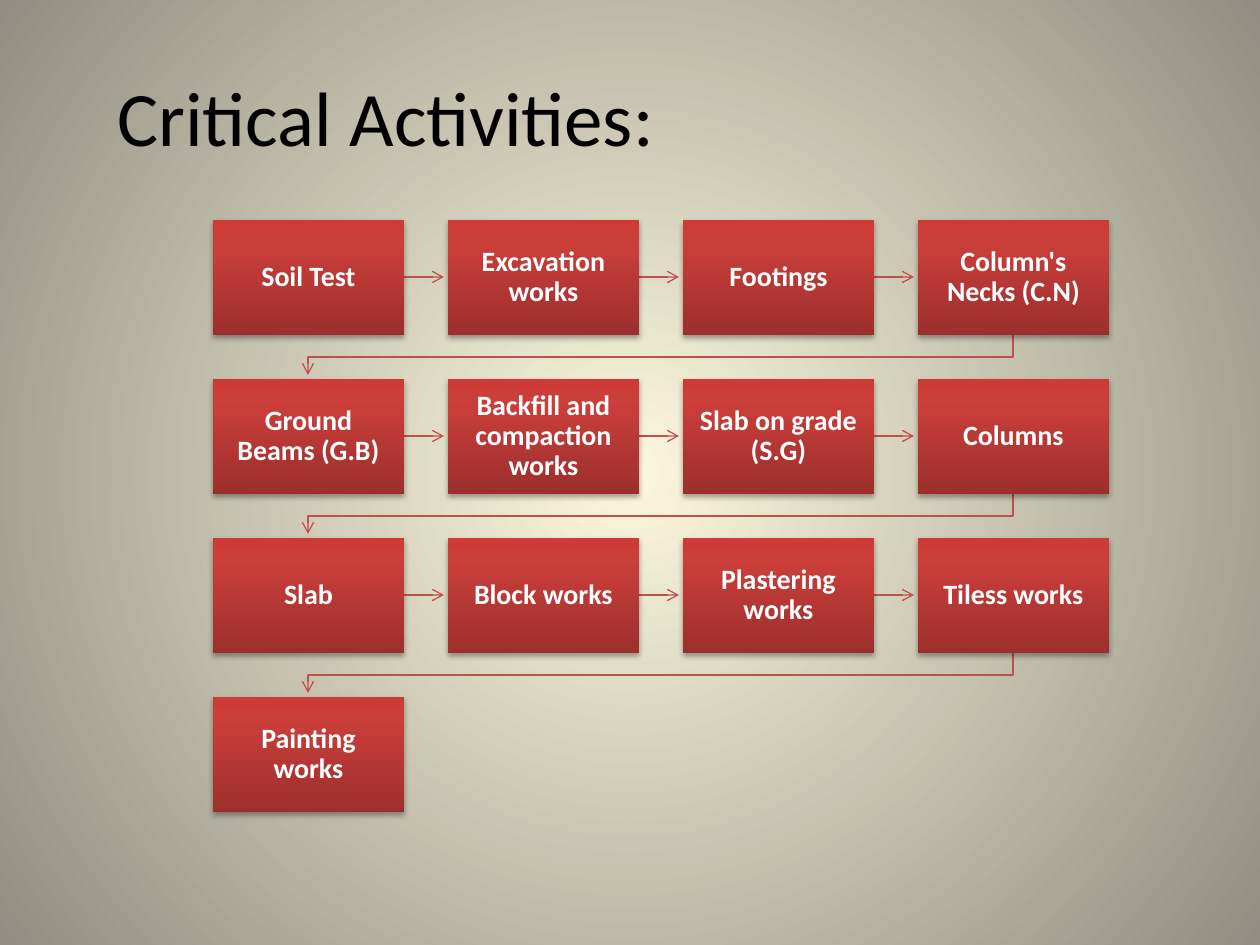
import pptx
import pptx.util
import pptx.dml.color
import pptx.enum.shapes
import pptx.enum.text
import pptx.oxml
import pptx.oxml.ns

# Content
TITLE = "Critical Activities:"
ACTIVITIES = [
    "Soil Test", "Excavation works", "Footings", "Column's Necks (C.N)",
    "Ground Beams (G.B)", "Backfill and compaction works", "Slab on grade (S.G)", "Columns",
    "Slab", "Block works", "Plastering works", "Tiless works",
    "Painting works",
]
COLORS = {"title": "000000", "label": "FFFFFF", "arrow": "C0504D", "shadow": "000000"}
BOX_STOPS = [(0, "9C2F2D"), (80, "CB3E3A"), (100, "CE3B37")]
BACKGROUND_STOPS = [(0, "FCF7DD"), (100, "918E81")]
UPWARD = '<a:lin ang="16200000" scaled="0"/>'
FROM_CENTER = ('<a:path path="circle"><a:fillToRect l="50000" t="50000" '
               'r="50000" b="50000"/></a:path>')

# Layout in px
PX = 914400 // 126
COLUMNS = 4
LEFT, TOP = 213, 220
BOX_W, BOX_H = 191, 115
PITCH_X, PITCH_Y = 235, 159
ARROW_LENGTH = 40
INSET = 15

qn = pptx.oxml.ns.qn
NS = pptx.oxml.ns.nsdecls("a")


def px(*values):
    return [pptx.util.Emu(v * PX) for v in values]


def rgb(name):
    return pptx.dml.color.RGBColor.from_string(COLORS[name])


def set_gradient(fill, parent, stops, direction):
    fill.solid()
    stop_xml = "".join(f'<a:gs pos="{pos * 1000}"><a:srgbClr val="{color}"/></a:gs>'
                       for pos, color in stops)
    gradient = pptx.oxml.parse_xml(
        f'<a:gradFill {NS} rotWithShape="1"><a:gsLst>{stop_xml}</a:gsLst>{direction}</a:gradFill>')
    parent.replace(parent.find(qn("a:solidFill")), gradient)


def set_text(sp, text, size, color, align, bold=False):
    tf = sp.text_frame
    tf.word_wrap = True
    tf.vertical_anchor = pptx.enum.text.MSO_ANCHOR.MIDDLE
    tf.text = text
    p = tf.paragraphs[0]
    p.alignment = align
    font = p.runs[0].font
    font.name, font.size, font.bold = "Calibri", pptx.util.Pt(size), bold
    font.color.rgb = rgb(color)
    return tf


def style_arrow(sp):
    sp.line.color.rgb = rgb("arrow")
    sp.line.width = pptx.util.Pt(0.75)
    spPr = sp._element.spPr
    spPr.find(qn("a:ln")).append(pptx.oxml.parse_xml(f'<a:tailEnd {NS} type="arrow"/>'))
    spPr.append(pptx.oxml.parse_xml(f"<a:effectLst {NS}/>"))


def add_box(shapes, x, y, text):
    sp = shapes.add_shape(pptx.enum.shapes.MSO_SHAPE.RECTANGLE, *px(x, y, BOX_W, BOX_H))
    spPr = sp._element.spPr
    set_gradient(sp.fill, spPr, BOX_STOPS, UPWARD)
    sp.line.fill.background()
    sp.shadow.inherit = False
    spPr.find(qn("a:effectLst")).append(pptx.oxml.parse_xml(
        f'<a:outerShdw {NS} blurRad="40000" dist="23000" dir="5400000" rotWithShape="0">'
        f'<a:srgbClr val="{COLORS["shadow"]}"><a:alpha val="35000"/></a:srgbClr></a:outerShdw>'))
    tf = set_text(sp, text, 16, "label", pptx.enum.text.PP_ALIGN.CENTER, bold=True)
    tf.margin_left = tf.margin_top = tf.margin_right = tf.margin_bottom = px(INSET)[0]
    tf.paragraphs[0].line_spacing = 0.9


def add_next_arrow(shapes, x, y):
    start, middle = x + BOX_W, y + BOX_H // 2
    style_arrow(shapes.add_connector(pptx.enum.shapes.MSO_CONNECTOR.STRAIGHT,
                                     *px(start, middle, start + ARROW_LENGTH, middle)))


def add_wrap_arrow(shapes, x, y):
    start_x, end_x = x + BOX_W // 2, LEFT + BOX_W // 2
    bottom = y + BOX_H
    turn = bottom + (PITCH_Y - BOX_H) // 2
    builder = shapes.build_freeform(start_x, bottom, scale=PX)
    builder.add_line_segments(
        [(start_x, turn), (end_x, turn), (end_x, bottom + ARROW_LENGTH)], close=False)
    sp = builder.convert_to_shape()
    sp.fill.background()
    style_arrow(sp)


def main():
    prs = pptx.Presentation()
    prs.slide_width, prs.slide_height = px(1260, 945)
    s = prs.slides.add_slide(prs.slide_layouts[6])

    # Background
    fill = s.background.fill
    fill.solid()
    set_gradient(fill, s._element.cSld.find(qn("p:bg")).find(qn("p:bgPr")),
                 BACKGROUND_STOPS, FROM_CENTER)

    # Title
    title = s.shapes.add_textbox(*px(105, 37, 1113, 157))
    set_text(title, TITLE, 44, "title", pptx.enum.text.PP_ALIGN.LEFT)

    # Activity chain, row by row
    for i, activity in enumerate(ACTIVITIES):
        row, column = divmod(i, COLUMNS)
        x, y = LEFT + column * PITCH_X, TOP + row * PITCH_Y
        if i < len(ACTIVITIES) - 1:
            add_arrow = add_wrap_arrow if column == COLUMNS - 1 else add_next_arrow
            add_arrow(s.shapes, x, y)
        add_box(s.shapes, x, y, activity)

    prs.save("out.pptx")


if __name__ == "__main__":
    main()
